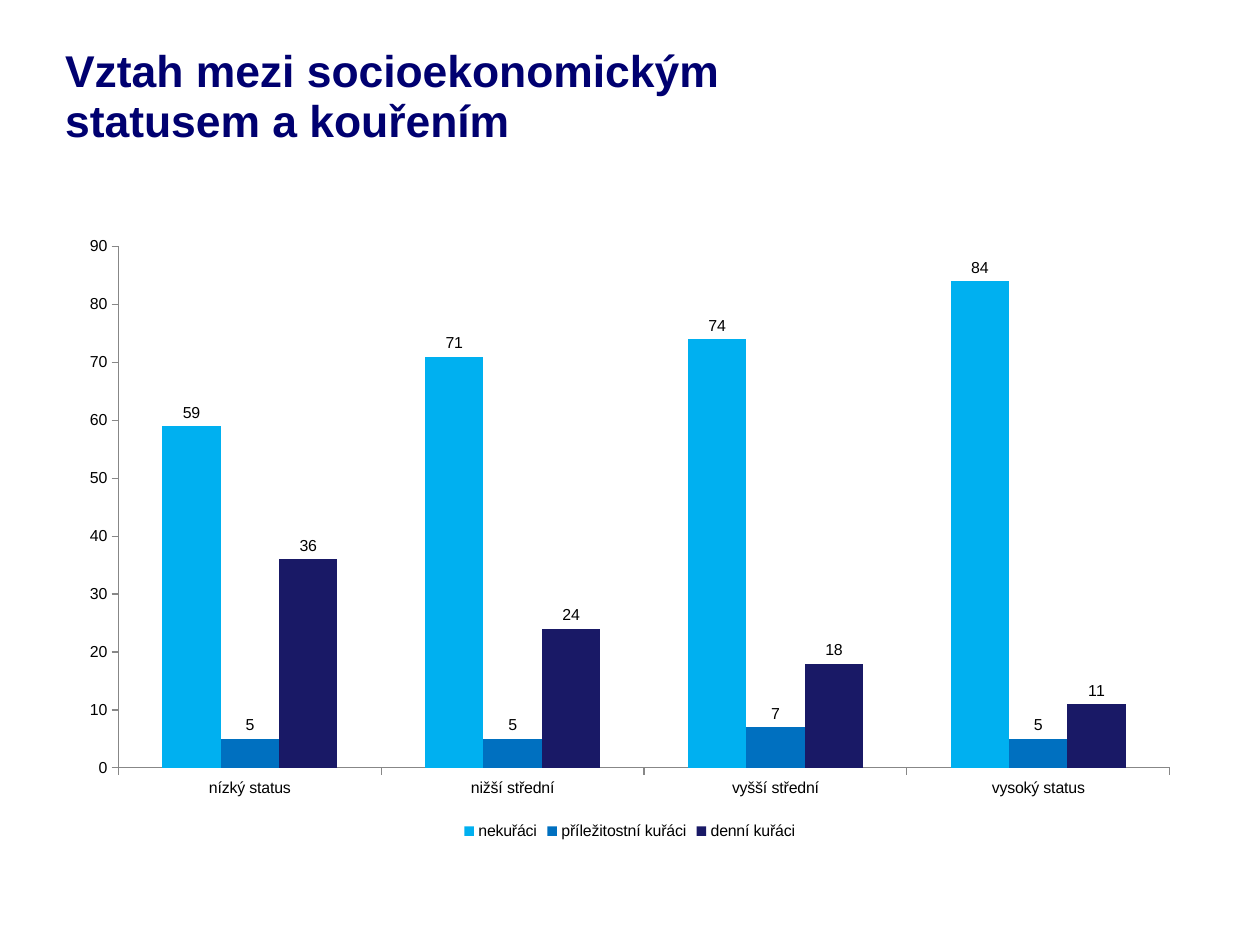
import pptx
import pptx.chart.data
import pptx.dml.color
import pptx.enum.chart
import pptx.enum.text
import pptx.util
from pptx.util import Inches


def rgb(value):
    return pptx.dml.color.RGBColor.from_string(value)


class SlideBuilder:
    """Hold the slide style and add titles and column charts to the slide."""

    font = "Arial"
    title_color = "000070"
    text_color = "000000"
    axis_color = "878787"

    def __init__(self, prs):
        self.s = prs.slides.add_slide(prs.slide_layouts[6])

    def style(self, font, size, color, bold=False):
        font.name = self.font
        font.size = pptx.util.Pt(size)
        font.bold = bold
        font.color.rgb = rgb(color)

    def title(self, text, left, top, width, height):
        sp = self.s.shapes.add_textbox(
            Inches(left), Inches(top), Inches(width), Inches(height))
        tf = sp.text_frame
        tf.word_wrap = True
        tf.vertical_anchor = pptx.enum.text.MSO_ANCHOR.BOTTOM
        tf.margin_left = tf.margin_right = tf.margin_top = tf.margin_bottom = 0
        p = tf.paragraphs[0]
        p.text = text
        p.line_spacing = 0.93
        for r in p.runs:
            self.style(r.font, 28, self.title_color, bold=True)

    def axis(self, axis):
        axis.has_major_gridlines = False
        axis.major_tick_mark = pptx.enum.chart.XL_TICK_MARK.OUTSIDE
        axis.format.line.color.rgb = rgb(self.axis_color)
        axis.format.line.width = pptx.util.Pt(0.75)

    def column_chart(self, categories, series, left, top, width, height):
        data = pptx.chart.data.CategoryChartData()
        data.categories = categories
        for name, values, _ in series:
            data.add_series(name, values)
        chart = self.s.shapes.add_chart(
            pptx.enum.chart.XL_CHART_TYPE.COLUMN_CLUSTERED,
            Inches(left), Inches(top), Inches(width), Inches(height), data).chart
        self.style(chart.font, 10, self.text_color)
        chart.has_title = False
        chart.has_legend = True
        chart.legend.position = pptx.enum.chart.XL_LEGEND_POSITION.BOTTOM
        chart.legend.include_in_layout = False
        self.axis(chart.category_axis)
        self.axis(chart.value_axis)
        chart.value_axis.minimum_scale = 0
        chart.value_axis.maximum_scale = 90
        chart.value_axis.major_unit = 10

        plot = chart.plots[0]
        plot.gap_width = 150
        plot.overlap = 0
        plot.vary_by_categories = False
        for columns, (_, _, color) in zip(plot.series, series):
            columns.format.fill.solid()
            columns.format.fill.fore_color.rgb = rgb(color)
            labels = columns.data_labels
            labels.show_value = True
            labels.position = pptx.enum.chart.XL_LABEL_POSITION.OUTSIDE_END
            self.style(labels.font, 10, self.text_color)


def main():
    prs = pptx.Presentation()
    prs.slide_width = Inches(28 / 2.54)
    prs.slide_height = Inches(21 / 2.54)
    slide = SlideBuilder(prs)
    slide.title("Vztah mezi socioekonomickým\vstatusem a kouřením",
                0.57, 0.31, 7.44, 0.98)
    slide.column_chart(
        ["nízký status", "nižší střední", "vyšší střední", "vysoký status"],
        [("nekuřáci", (59, 71, 74, 84), "00B0F0"),
         ("příležitostní kuřáci", (5, 5, 7, 5), "0070C0"),
         ("denní kuřáci", (36, 24, 18, 11), "191966")],
        0.59, 1.97, 9.84, 5.42)
    prs.save("out.pptx")


if __name__ == "__main__":
    main()
